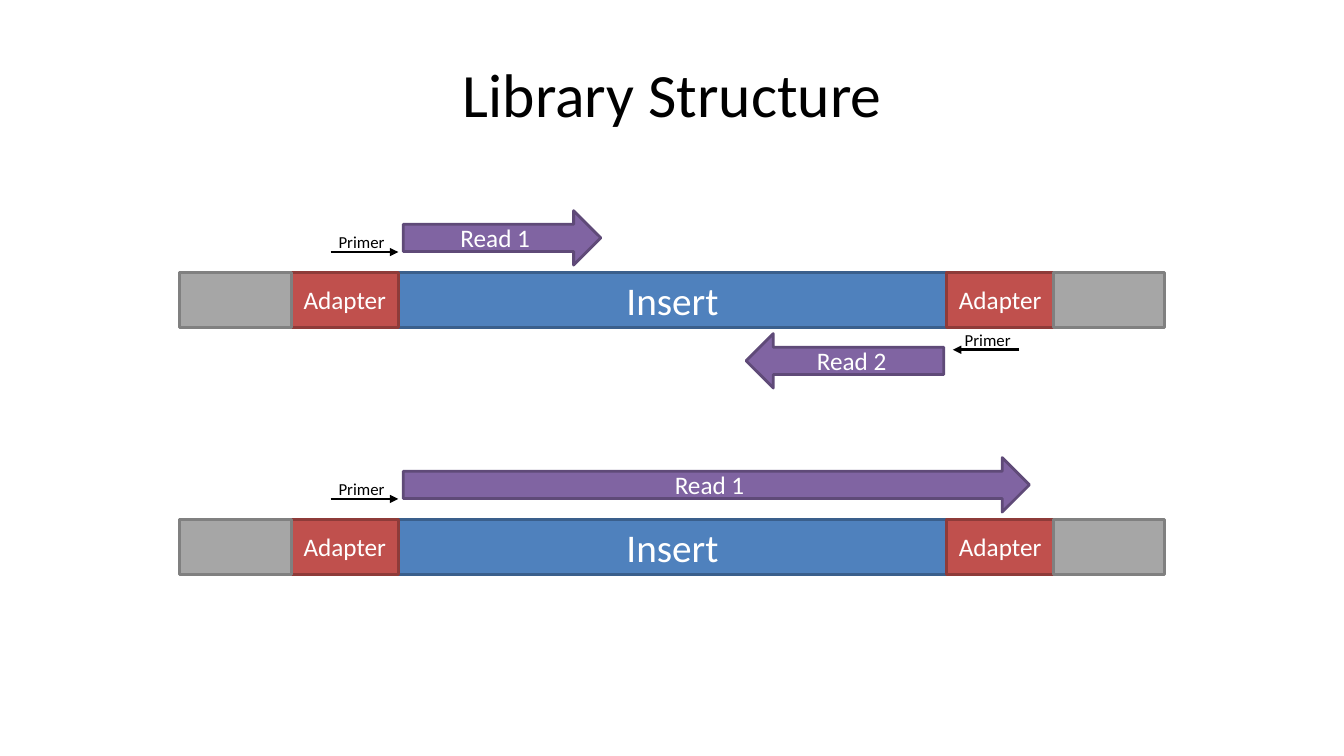
from lxml.etree import SubElement
from pptx import Presentation
from pptx.dml.color import RGBColor
from pptx.enum.shapes import MSO_CONNECTOR, MSO_SHAPE
from pptx.enum.text import MSO_ANCHOR, MSO_AUTO_SIZE, PP_ALIGN
from pptx.oxml.ns import qn
from pptx.util import Inches, Pt

BLACK = RGBColor(0x00, 0x00, 0x00)
WHITE = RGBColor(0xFF, 0xFF, 0xFF)
BLUE = RGBColor(0x4F, 0x81, 0xBD)
BLUE_EDGE = RGBColor(0x3A, 0x5F, 0x8C)
RED = RGBColor(0xC0, 0x50, 0x4D)
RED_EDGE = RGBColor(0x8E, 0x3B, 0x39)
GRAY = RGBColor(0xA6, 0xA6, 0xA6)
GRAY_EDGE = RGBColor(0x80, 0x80, 0x80)
PURPLE = RGBColor(0x80, 0x64, 0xA2)
PURPLE_EDGE = RGBColor(0x5F, 0x4A, 0x78)


def write(s, text, size=18, color=WHITE, align=PP_ALIGN.CENTER,
          anchor=MSO_ANCHOR.MIDDLE, wrap=True):
    tf = s.text_frame
    tf.word_wrap = wrap
    tf.vertical_anchor = anchor
    p = tf.paragraphs[0]
    p.alignment = align
    r = p.add_run()
    r.text = text
    r.font.size = Pt(size)
    r.font.name = "Calibri"
    r.font.color.rgb = color


def add_block(parent, kind, x, y, w, h, fill, edge, text="", size=18):
    s = parent.shapes.add_shape(kind, Inches(x), Inches(y), Inches(w), Inches(h))
    s.shadow.inherit = False
    s.fill.solid()
    s.fill.fore_color.rgb = fill
    s.line.color.rgb = edge
    s.line.width = Pt(2)
    if text:
        write(s, text, size=size)


prs = Presentation()
prs.slide_width, prs.slide_height = Inches(13.33), Inches(7.5)
slide = prs.slides.add_slide(prs.slide_layouts[6])

title = slide.shapes.add_textbox(Inches(0.67), Inches(0.3), Inches(12), Inches(1.25))
write(title, "Library Structure", size=44, color=BLACK)

BAR_H, READ_H = 0.55, 0.54
FIRST_ROW, ROW_STEP = 2.7, 2.45
COLS = [1.78, 2.89, 3.95, 9.39, 10.45, 11.55]
SEGMENTS = [
    (2, BLUE, BLUE_EDGE, "Insert", 28),
    (1, RED, RED_EDGE, "Adapter", 18),
    (0, GRAY, GRAY_EDGE, "", 18),
    (3, RED, RED_EDGE, "Adapter", 18),
    (4, GRAY, GRAY_EDGE, "", 18),
]
RIGHT, LEFT = MSO_SHAPE.RIGHT_ARROW, MSO_SHAPE.LEFT_ARROW
READS = [
    (0, RIGHT, "Read 1", 4.0, 1.96, -0.61, 3.28, 3.95, 3.26, -0.2),
    (1, RIGHT, "Read 1", 4.0, 6.21, -0.61, 3.28, 3.95, 3.26, -0.2),
    (0, LEFT, "Read 2", 7.4, 1.96, 0.61, 10.11, 9.45, 9.47, 0.77),
]

for row in range(2):
    strand = slide.shapes.add_group_shape()
    for col, fill, edge, text, size in SEGMENTS:
        add_block(strand, MSO_SHAPE.RECTANGLE, COLS[col], FIRST_ROW + row * ROW_STEP,
                  COLS[col + 1] - COLS[col], BAR_H, fill, edge, text, size)

for row, kind, text, x, w, read_dy, start, end, label_x, primer_dy in READS:
    read = slide.shapes.add_group_shape()
    bar_y = FIRST_ROW + row * ROW_STEP
    primer_y = bar_y + primer_dy

    primer = read.shapes.add_connector(MSO_CONNECTOR.STRAIGHT, Inches(start),
                                       Inches(primer_y), Inches(end), Inches(primer_y))
    primer.line.color.rgb = BLACK
    primer.line.width = Pt(2)
    SubElement(primer.line._get_or_add_ln(), qn("a:tailEnd"), type="triangle")
    SubElement(primer._element.spPr, qn("a:effectLst"))

    label = read.shapes.add_textbox(Inches(label_x), Inches(primer_y - 0.25),
                                    Inches(0.66), Inches(0.3))
    write(label, "Primer", size=12, color=BLACK, align=PP_ALIGN.LEFT,
          anchor=MSO_ANCHOR.TOP, wrap=False)
    label.text_frame.auto_size = MSO_AUTO_SIZE.SHAPE_TO_FIT_TEXT

    add_block(read, kind, x, bar_y + read_dy, w, READ_H, PURPLE, PURPLE_EDGE, text)

prs.save("out.pptx")
